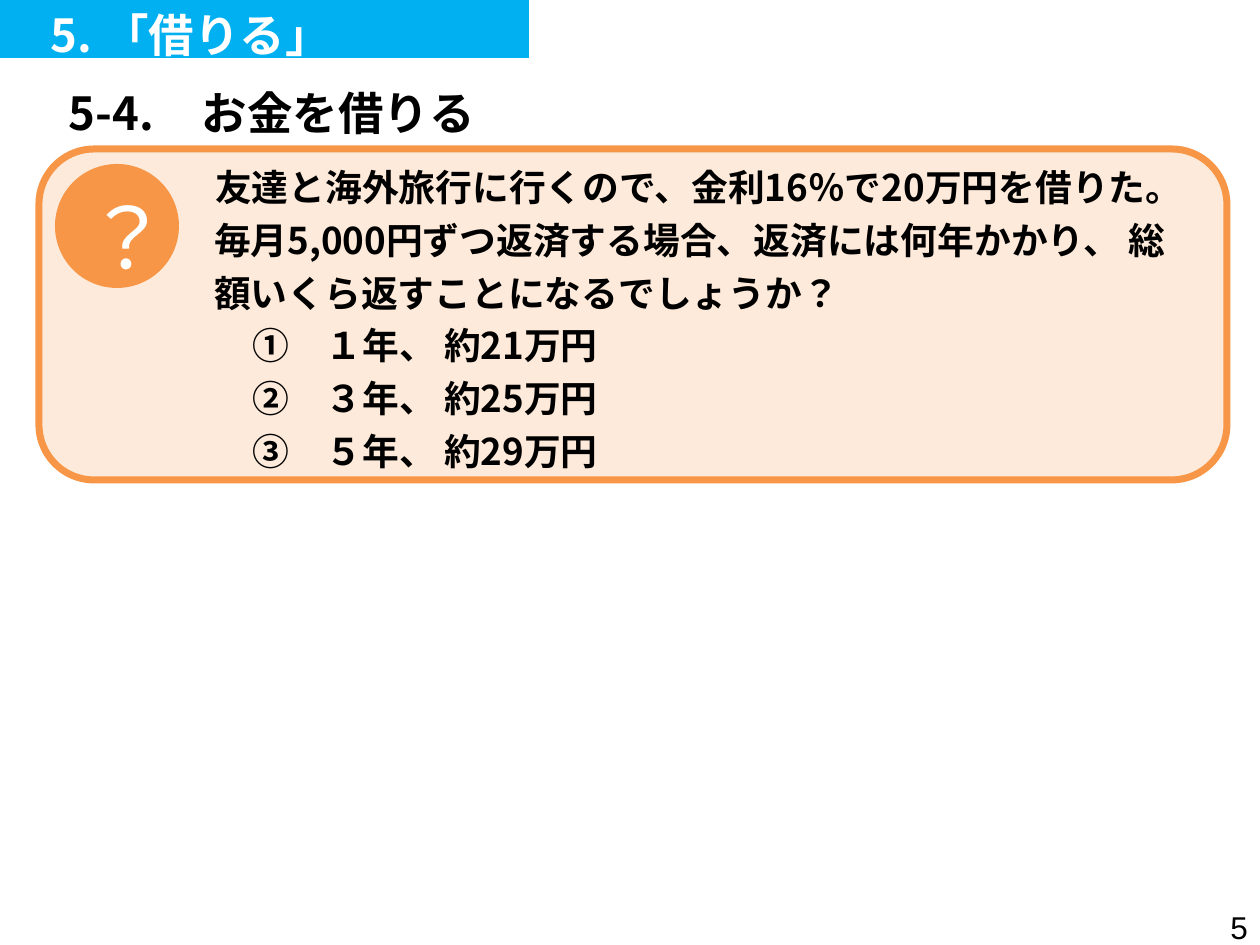
from lxml import etree
from pptx import Presentation
from pptx.dml.color import RGBColor
from pptx.enum.lang import MSO_LANGUAGE_ID
from pptx.enum.shapes import MSO_SHAPE
from pptx.enum.text import MSO_ANCHOR, MSO_AUTO_SIZE, PP_ALIGN
from pptx.oxml.ns import qn
from pptx.util import Pt

LEFT, CENTER, RIGHT = PP_ALIGN.LEFT, PP_ALIGN.CENTER, PP_ALIGN.RIGHT
MIDDLE, TOP = MSO_ANCHOR.MIDDLE, MSO_ANCHOR.TOP
ROUNDED, OVAL = MSO_SHAPE.ROUNDED_RECTANGLE, MSO_SHAPE.OVAL
LANGUAGE = MSO_LANGUAGE_ID.JAPANESE
NO_GRID_STYLE = "{2D5ABB26-0587-4C30-8999-92F81FD0307C}"

BLACK = RGBColor(0x00, 0x00, 0x00)
WHITE = RGBColor(0xFF, 0xFF, 0xFF)
BLUE = RGBColor(0x00, 0xB0, 0xF0)
ORANGE = RGBColor(0xF7, 0x96, 0x46)
PEACH = RGBColor(0xFD, 0xEA, 0xDA)
JAPANESE = "Noto Sans CJK JP"
LATIN = "Arial"

CHAPTER = "5. 「借りる」"
SECTION = [("5-4.", 135, CENTER, 11), ("お金を借りる", 331, LEFT, 23)]
QUESTION = ("友達と海外旅行に行くので、金利16％で20万円を借りた。"
            "毎月5,000円ずつ返済する場合、返済には何年かかり、 "
            "総額いくら返すことになるでしょうか？")
CHOICES = ["①　１年、 約21万円", "②　３年、 約25万円", "③　５年、 約29万円"]
PAGE_NUMBER = "5"

EMU_PER_PX = 914400 // 126
QUESTION_INDENT = 147
CHOICE_INDENT = QUESTION_INDENT + 37


def px(*lengths):
    return [round(length * EMU_PER_PX) for length in lengths]


def set_frame(text_frame, anchor, left=12):
    text_frame.word_wrap = True
    text_frame.auto_size = MSO_AUTO_SIZE.NONE
    text_frame.vertical_anchor = anchor
    text_frame.margin_left, text_frame.margin_right = px(left, 12)
    text_frame.margin_top, text_frame.margin_bottom = px(6, 6)


def format_paragraph(paragraph, size, color, align=LEFT, bold=True,
                     font_name=JAPANESE, spacing=0.2, indent=0):
    paragraph.alignment = align
    paragraph.line_spacing = 1.2
    paragraph.space_before = paragraph.space_after = Pt(round(size * spacing))
    properties = paragraph._p.get_or_add_pPr()
    properties.set("hangingPunct", "0")
    if indent:
        margin, first_line = px(indent, 1)
        properties.set("marL", str(margin))
        properties.set("indent", str(first_line))
    for run in paragraph.runs:
        run.font.size = Pt(size)
        run.font.bold = bold
        run.font.color.rgb = color
        run.font.name = font_name
        run.font.language_id = LANGUAGE
        east_asian = etree.SubElement(run._r.get_or_add_rPr(), qn("a:ea"))
        east_asian.set("typeface", font_name)


def add_shape(slide, kind, box, fill):
    shape = slide.shapes.add_shape(kind, *px(*box))
    shape.shadow.inherit = False
    shape.fill.solid()
    shape.fill.fore_color.rgb = fill
    shape.line.fill.background()
    set_frame(shape.text_frame, MIDDLE)
    return shape


def add_chapter(slide):
    title = slide.shapes.title
    title.left, title.top, title.width, title.height = px(0, 0, 529, 58)
    title.fill.solid()
    title.fill.fore_color.rgb = BLUE
    title.text_frame.text = CHAPTER
    set_frame(title.text_frame, MIDDLE, left=51)
    format_paragraph(title.text_frame.paragraphs[0], 26, WHITE)


def add_section(slide):
    width = sum(column[1] for column in SECTION)
    table = slide.shapes.add_table(1, len(SECTION), *px(44, 58, width, 86)).table
    table.first_row = table.horz_banding = False
    table._tbl.tblPr.find(qn("a:tableStyleId")).text = NO_GRID_STYLE
    for index, (text, column_width, align, inset) in enumerate(SECTION):
        table.columns[index].width = px(column_width)[0]
        cell = table.cell(0, index)
        cell.fill.background()
        cell.vertical_anchor = MIDDLE
        cell.margin_left, cell.margin_right = px(inset, 11)
        cell.margin_top, cell.margin_bottom = px(6, 6)
        cell.text_frame.text = text
        format_paragraph(cell.text_frame.paragraphs[0], 26, BLACK, align, spacing=0)


def add_question(slide):
    panel = add_shape(slide, ROUNDED, (39, 149, 1188, 331), PEACH)
    panel.line.color.rgb = ORANGE
    panel.line.width = Pt(4)
    panel.text_frame.text = "\n".join([QUESTION] + CHOICES)
    for index, paragraph in enumerate(panel.text_frame.paragraphs):
        indent = CHOICE_INDENT if index else QUESTION_INDENT
        format_paragraph(paragraph, 21, BLACK, spacing=0, indent=indent)
    badge = add_shape(slide, OVAL, (55, 164, 124, 124), ORANGE)
    badge.text_frame.text = "？"
    format_paragraph(badge.text_frame.paragraphs[0], 48, WHITE, CENTER, bold=False)


def add_page_number(slide):
    text_frame = slide.shapes.add_textbox(*px(966, 895, 294, 50)).text_frame
    set_frame(text_frame, TOP)
    text_frame.text = PAGE_NUMBER
    format_paragraph(text_frame.paragraphs[0], 18, BLACK, RIGHT, False, LATIN)


def main():
    presentation = Presentation()
    presentation.slide_width, presentation.slide_height = px(1260, 945)
    slide = presentation.slides.add_slide(presentation.slide_layouts[5])
    add_chapter(slide)
    add_section(slide)
    add_question(slide)
    add_page_number(slide)
    presentation.save("out.pptx")


if __name__ == "__main__":
    main()
